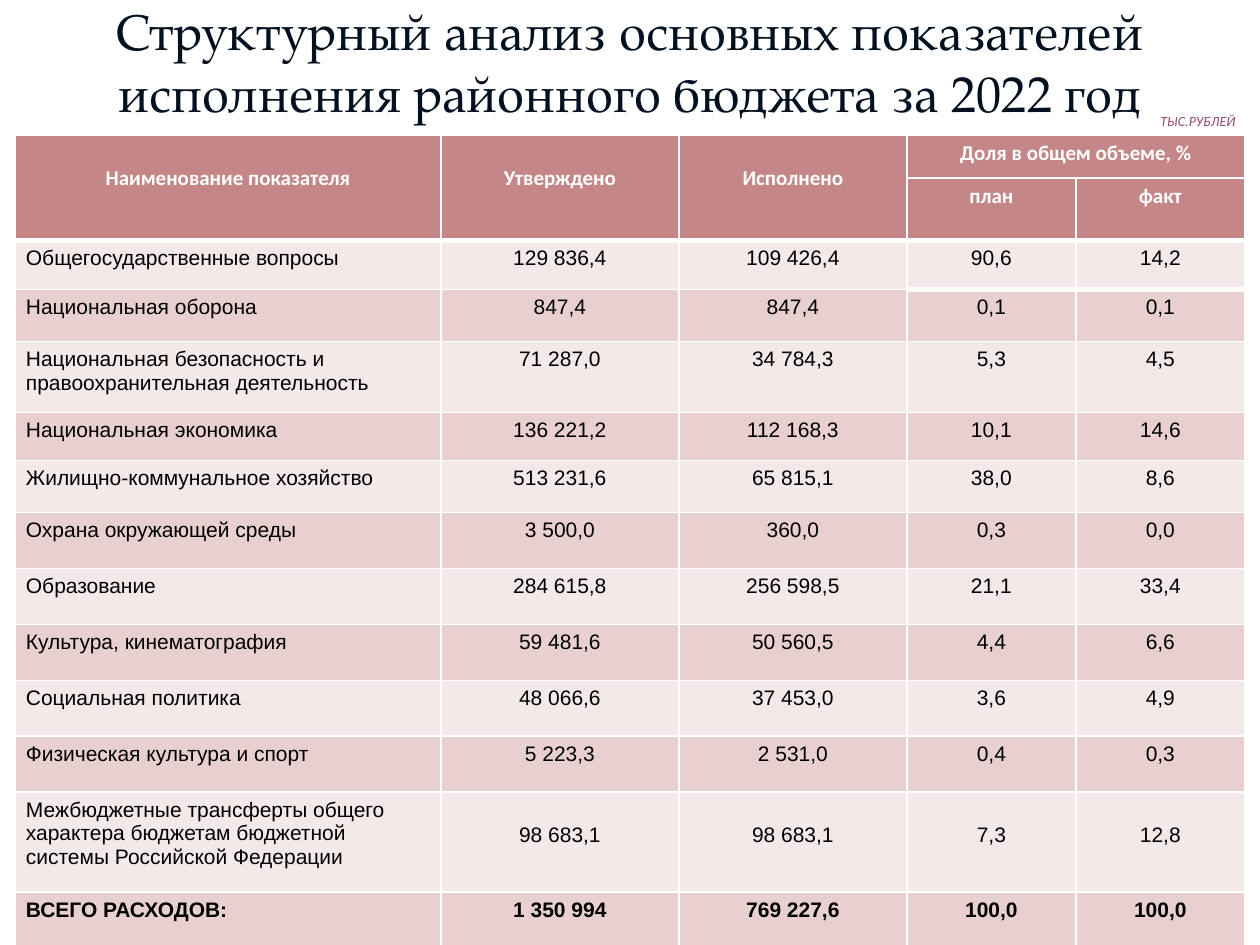
from lxml import etree
from pptx import Presentation
from pptx.dml.color import RGBColor
from pptx.enum.text import MSO_ANCHOR, PP_ALIGN
from pptx.oxml.ns import qn
from pptx.util import Pt

EMU_PER_PX = 914400 // 126
LEFT, CENTER = PP_ALIGN.LEFT, PP_ALIGN.CENTER
TOP, MIDDLE = MSO_ANCHOR.TOP, MSO_ANCHOR.MIDDLE

WHITE = RGBColor(0xFF, 0xFF, 0xFF)
BLACK = RGBColor(0x00, 0x00, 0x00)
NAVY = RGBColor(0x02, 0x10, 0x20)
PLUM = RGBColor(0x94, 0x4A, 0x74)
ROSE = RGBColor(0xC4, 0x86, 0x86)
BANDS = (RGBColor(0xF4, 0xE9, 0xE9), RGBColor(0xE8, 0xD0, 0xD0))

TITLE_FONT = {"name": "TeX Gyre Pagella", "size": Pt(28.8), "color": NAVY}
UNIT_FONT = {"name": "Calibri", "size": Pt(8), "color": PLUM, "italic": True}
HEADER_FONT = {"name": "Calibri", "size": Pt(12), "color": WHITE, "bold": True}
BODY_FONT = {"name": "Arial", "size": Pt(12), "color": BLACK, "bold": False}
TOTAL_FONT = {**BODY_FONT, "bold": True}

COLUMN_WIDTHS = (426, 238, 228, 169, 169)
ROW_HEIGHTS = (43, 62, 49, 52, 71, 48, 52, 56, 56, 56, 56, 56, 100, 54)
HEADER_ROWS = 2
SHARE_COLUMN = 3
THIN, THICK = 1, 3
CELL_TOP, LOWERED_TOP = 6, 31

HEADERS = (
    ("Наименование показателя", "Утверждено", "Исполнено", "Доля в общем объеме, %", ""),
    ("", "", "", "план", "факт"),
)
TRANSFERS = "Межбюджетные трансферты общего характера бюджетам бюджетной системы Российской Федерации"
EXPENSES = (
    ("Общегосударственные вопросы", "129 836,4", "109 426,4", "90,6", "14,2"),
    ("Национальная оборона", "847,4", "847,4", "0,1", "0,1"),
    ("Национальная безопасность и правоохранительная деятельность",
     "71 287,0", "34 784,3", "5,3", "4,5"),
    ("Национальная экономика", "136 221,2", "112 168,3", "10,1", "14,6"),
    ("Жилищно-коммунальное хозяйство", "513 231,6", "65 815,1", "38,0", "8,6"),
    ("Охрана окружающей среды", "3 500,0", "360,0", "0,3", "0,0"),
    ("Образование", "284 615,8", "256 598,5", "21,1", "33,4"),
    ("Культура, кинематография", "59 481,6", "50 560,5", "4,4", "6,6"),
    ("Социальная политика", "48 066,6", "37 453,0", "3,6", "4,9"),
    ("Физическая культура и спорт", "5 223,3", "2 531,0", "0,4", "0,3"),
    (TRANSFERS, "98 683,1", "98 683,1", "7,3", "12,8"),
    ("ВСЕГО РАСХОДОВ:", "1 350 994", "769 227,6", "100,0", "100,0"),
)


def px(value):
    return value * EMU_PER_PX


class SlideBuilder:
    def __init__(self, presentation):
        self.slide = presentation.slides.add_slide(presentation.slide_layouts[6])

    def add_text(self, text_frame, text, font_format, align):
        paragraph = text_frame.paragraphs[0]
        paragraph.alignment = align
        run = paragraph.add_run()
        run.text = text
        for name, value in font_format.items():
            if name == "color":
                run.font.color.rgb = value
            else:
                setattr(run.font, name, value)
        return paragraph

    def text_box(self, box, text, font_format, align=LEFT, anchor=TOP):
        shape = self.slide.shapes.add_textbox(*map(px, box))
        shape.text_frame.word_wrap = True
        shape.text_frame.vertical_anchor = anchor
        return self.add_text(shape.text_frame, text, font_format, align)

    def table(self, left, top, widths, heights):
        frame = self.slide.shapes.add_table(
            len(heights), len(widths), px(left), px(top), px(sum(widths)), px(sum(heights)))
        for column, width in zip(frame.table.columns, widths):
            column.width = px(width)
        for row, height in zip(frame.table.rows, heights):
            row.height = px(height)
        return frame.table

    def cell(self, cell, text, font_format, fill, align=CENTER, margin_top=CELL_TOP,
             top_line=THIN, bottom_line=THIN):
        margins = {"margin_left": 11, "margin_right": 11,
                   "margin_top": margin_top, "margin_bottom": CELL_TOP}
        for name, value in margins.items():
            setattr(cell, name, px(value))
        if text:
            self.add_text(cell.text_frame, text, font_format, align)
        self.borders(cell, {"lnL": THIN, "lnR": THIN, "lnT": top_line, "lnB": bottom_line})
        cell.fill.solid()
        cell.fill.fore_color.rgb = fill

    def borders(self, cell, lines):
        properties = cell._tc.get_or_add_tcPr()
        for tag, points in lines.items():
            line = etree.SubElement(properties, qn(f"a:{tag}"), w=str(Pt(points)))
            solid = etree.SubElement(line, qn("a:solidFill"))
            etree.SubElement(solid, qn("a:srgbClr"), val=str(WHITE))


def main():
    presentation = Presentation()
    presentation.slide_width = px(1260)
    presentation.slide_height = px(945)
    builder = SlideBuilder(presentation)

    # Budget table
    table = builder.table(15, 135, COLUMN_WIDTHS, ROW_HEIGHTS)

    # Header: three tall cells and a split share column
    for column in range(SHARE_COLUMN):
        table.cell(0, column).merge(table.cell(1, column))
    table.cell(0, SHARE_COLUMN).merge(table.cell(0, SHARE_COLUMN + 1))
    for row, labels in enumerate(HEADERS):
        for column, label in enumerate(labels):
            tall = column < SHARE_COLUMN
            builder.cell(table.cell(row, column), label, HEADER_FONT, ROSE,
                         margin_top=LOWERED_TOP if tall else CELL_TOP,
                         bottom_line=THICK if tall or row == 1 else THIN)

    # Expense rows, with the total last
    for index, expense in enumerate(EXPENSES):
        font_format = TOTAL_FONT if expense is EXPENSES[-1] else BODY_FONT
        for column, text in enumerate(expense):
            lowered = expense[0] == TRANSFERS and column > 0
            share = column >= SHARE_COLUMN
            builder.cell(table.cell(index + HEADER_ROWS, column), text, font_format,
                         BANDS[index % 2], CENTER if column else LEFT,
                         LOWERED_TOP if lowered else CELL_TOP,
                         THICK if index == 0 or (index == 1 and share) else THIN,
                         THICK if index == 0 and share else THIN)

    # Title and unit label
    title = builder.text_box(
        (0, 16, 1260, 90),
        "Структурный анализ основных показателей исполнения районного бюджета за 2022 год",
        TITLE_FONT, CENTER, MIDDLE)
    title.line_spacing = Pt(35.4)
    builder.text_box((1148, 106, 110, 30), "ТЫС.РУБЛЕЙ", UNIT_FONT)

    presentation.save("out.pptx")


if __name__ == "__main__":
    main()
